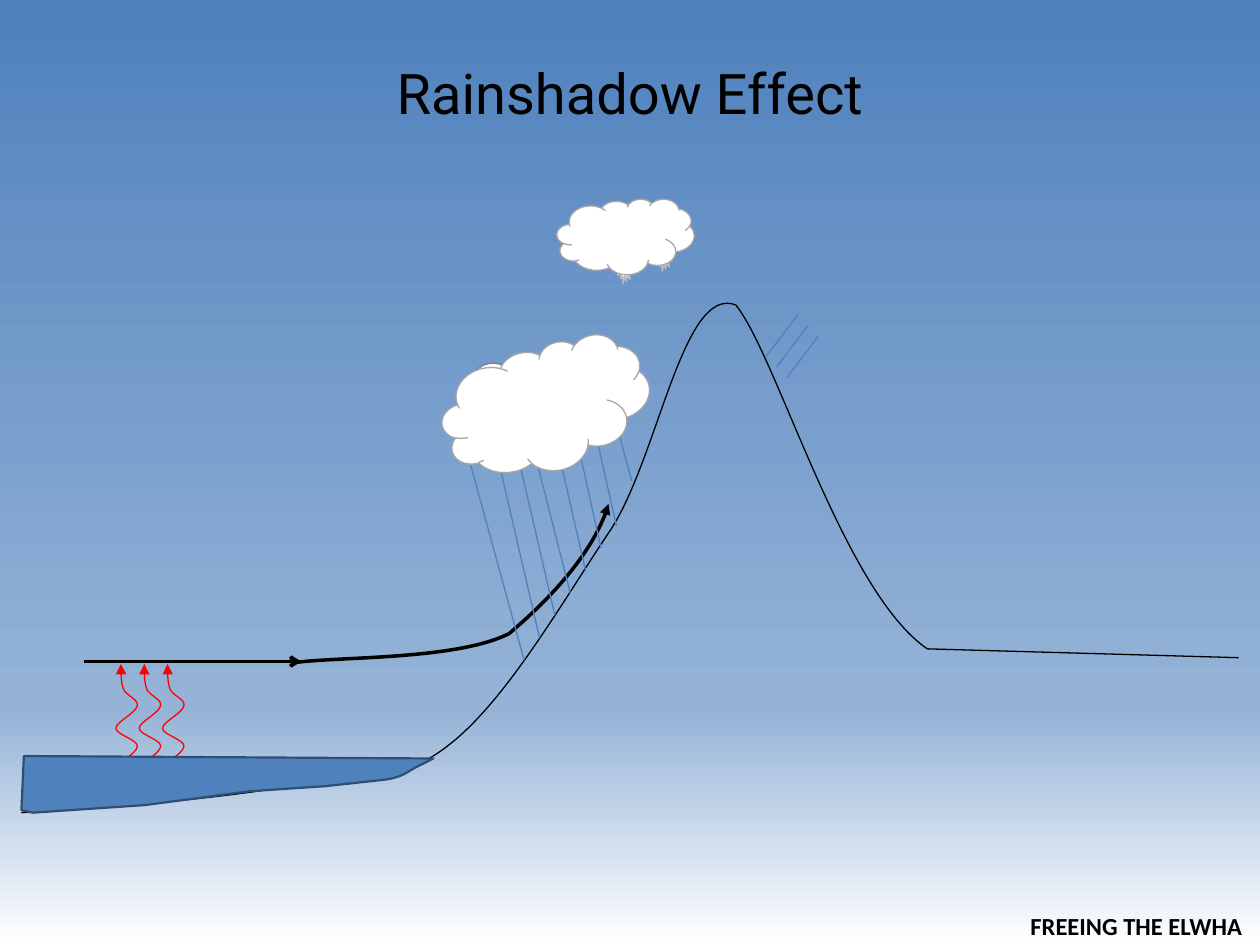
from copy import deepcopy

from lxml.etree import SubElement
from pptx import Presentation
from pptx.dml.color import RGBColor
from pptx.enum.shapes import MSO_CONNECTOR, MSO_SHAPE
from pptx.enum.text import MSO_ANCHOR, PP_ALIGN
from pptx.oxml.ns import qn
from pptx.util import Inches, Pt

BLUE = RGBColor(0x4F, 0x81, 0xBD)
HAZE = RGBColor(0x95, 0xB3, 0xD7)
SHORE = RGBColor(0x2F, 0x4E, 0x72)
WHITE = RGBColor(0xFF, 0xFF, 0xFF)
BLACK = RGBColor(0, 0, 0)
RED = RGBColor(0xFF, 0, 0)
GREY = RGBColor(0x80, 0x80, 0x80)
CLOUD_EDGE = RGBColor(0xA6, 0xA6, 0xA6)
SNOW_EDGE = RGBColor(0xBF, 0xBF, 0xBF)

W, H = Inches(10), Inches(7.5)
COL, ROW = W / 100, H / 75  # the slide is a grid of 100 columns by 75 rows


def grid(box, x=0, y=0):
    """Slide position of a point given from the corner of a box."""
    return round((box[0] + x) * COL), round((box[1] + y) * ROW)


def set_line(sp, color, width, head=None):
    sp.line.color.rgb = color
    sp.line.width = Pt(width)
    if head:
        SubElement(sp.line._get_or_add_ln(), qn("a:tailEnd"), type=head)


def add_line(shapes, box, start, end, color, width, head=None):
    sp = shapes.add_connector(MSO_CONNECTOR.STRAIGHT, *grid(box, *start), *grid(box, *end))
    set_line(sp, color, width, head)
    SubElement(sp._element.spPr, qn("a:effectLst"))


def add_shape(shapes, kind, box, edge, rotation=0):
    size = round(box[2] * COL), round(box[3] * ROW)
    sp = shapes.add_shape(kind, *grid(box), *size)
    sp.shadow.inherit = False
    sp.fill.solid()
    sp.fill.fore_color.rgb = WHITE
    sp.rotation = rotation
    set_line(sp, edge, 0.75)


def bend(sp, segments):
    """Turn each run of three outline points into one Bézier curve."""
    runs = iter(list(sp._element.iter(qn("a:lnTo"))))
    for seg in segments:
        first, *others = [next(runs) for _ in seg]
        if others:
            first.tag = qn("a:cubicBezTo")
            for run in others:
                first.append(run[0])
                run.getparent().remove(run)


def add_outline(shapes, box, start, segments, color, width, head=None, fill=None):
    """Draw segments of one point (straight) or three points (Bézier curve)."""
    builder = shapes.build_freeform(*grid(box, *start), scale=1.0)
    builder.add_line_segments([grid(box, *p) for seg in segments for p in seg],
                              close=fill is not None)
    sp = builder.convert_to_shape()
    bend(sp, segments)
    sp.shadow.inherit = False
    if fill is None:
        sp.fill.background()
    else:
        sp.fill.solid()
        sp.fill.fore_color.rgb = fill
    set_line(sp, color, width, head)


def add_sky(s):
    fill = s.background.fill
    fill.gradient()
    fill.gradient_angle = 270
    stops = next(s.element.iter(qn("a:gsLst")))
    stops.append(deepcopy(stops[-1]))
    for stop, (position, color) in zip(fill.gradient_stops,
                                       ((0, BLUE), (0.75, HAZE), (1, WHITE))):
        stop.position = position
        stop.color.rgb = color


def add_words(sp, box, text, font, align):
    sp.left, sp.top = grid(box)
    sp.width, sp.height = round(box[2] * COL), round(box[3] * ROW)
    tf = sp.text_frame
    tf.word_wrap = True
    p = tf.paragraphs[0]
    p.alignment = align
    r = p.add_run()
    r.text = text
    for name, value in font.items():
        setattr(r.font, name, value)
    r.font.color.rgb = BLACK
    return tf


def add_lee_drizzle(s, box):
    group = s.shapes.add_group_shape().shapes
    for i in range(3):
        step = 0.83 * i
        add_line(group, box, (step, 3.3 + step), (2.5 + step, step), BLUE, 0.75)


def add_snow(s, box):
    group = s.shapes.add_group_shape().shapes
    for x, y in ((2.5, 0), (1.9, 2), (3.8, 2), (0.7, 3), (0, 1)):
        add_shape(group, MSO_SHAPE.EXPLOSION1, (box[0] + x, box[1] + y, 1.2, 2), SNOW_EDGE)


def add_evaporation(s, box):
    group = s.shapes.add_group_shape().shapes
    wave = [((1, 7.6), (1.7, 7.1), (1.7, 6.7)),
            ((1.7, 6.2), (0, 5.8), (0, 5.3)),
            ((0, 4.8), (1.6, 4.1), (1.7, 3.5)),
            ((1.8, 3), (0.8, 2.7), (0.6, 2.2)),
            ((0.4, 1.6), (0.4, 0.7), (0.4, 0.3)),
            ((0.4, 0), (0.4, 0.1), (0.4, 0.2))]
    for i in range(3):
        add_outline(group, (box[0] + 1.85 * i, box[1]), (0.2, 8.1), wave, RED, 0.75, "triangle")


def add_mountain(s, box):
    slope = [((6.4, 41.5), (13.1, 41), (18.7, 40.2)),
             ((24.3, 39.3), (29.1, 40.2), (33.7, 36.7)),
             ((38.4, 33.2), (42.9, 25.2), (46.8, 19.4)),
             ((50.6, 13.5), (52.5, 0), (56.7, 1.6)),
             ((60, 5.7), (65.2, 24.3), (71.9, 28.9)),
             ((96.6, 29.6),)]
    add_outline(s.shapes, box, (0, 41.9), slope, BLACK, 0.75)


def add_sea(s, box):
    bed = [((32.7, 0.2),), ((31.5, 0.8),),
           ((30.8, 1.1), (30.4, 1.7), (28.7, 1.9)),
           ((24.1, 2.4),), ((18.1, 2.8),), ((9.8, 3.9),), ((0.9, 4.5),), ((0, 4.3),)]
    add_outline(s.shapes, box, (0.2, 0), bed, SHORE, 1.25, fill=BLUE)


def add_wind(s, box):
    add_line(s.shapes, box, (0, 12.5), (17.2, 12.5), BLACK, 2, "arrow")
    rise = [((20.2, 12.1), (29.5, 12.4), (33.7, 10.3)),
            ((36.3, 8.1), (40.4, 4.1), (41.6, 0))]
    add_outline(s.shapes, box, (16.6, 12.6), rise, BLACK, 2, "triangle")


def add_rain(s, box):
    group = s.shapes.add_group_shape().shapes
    tops = ((0, 5.3), (2.5, 5.8), (3.6, 3.5), (4.9, 3.5),
            (7.3, 5.3), (8.6, 3.5), (9.8, 1.8), (11, 0))
    # The feet climb the slope evenly; the last drop lands one step higher
    for i, (top, climb) in enumerate(zip(tops, (0, 1, 2, 3, 4, 5, 6, 8))):
        add_line(group, box, top, (4.9 + 1.22 * i, 23.2 - 1.78 * climb), BLUE, 0.75)


def add_clouds(s):
    add_shape(s.shapes, MSO_SHAPE.CLOUD_CALLOUT, (36.7, 28.3, 10, 5.8), GREY)
    add_shape(s.shapes, MSO_SHAPE.CLOUD, (35, 27.4, 16.7, 10), CLOUD_EDGE, 348.6)
    add_shape(s.shapes, MSO_SHAPE.CLOUD, (44.2, 15.8, 10.9, 6), CLOUD_EDGE)


def main():
    prs = Presentation()
    prs.slide_width, prs.slide_height = W, H
    s = prs.slides.add_slide(prs.slide_layouts[5])
    add_sky(s)

    # Title
    tf = add_words(s.shapes.title, (5, 3, 90, 8.7), "Rainshadow Effect",
                   {"name": "Roboto", "size": Pt(32)}, PP_ALIGN.CENTER)
    tf.vertical_anchor = MSO_ANCHOR.MIDDLE

    # Diagram, from back to front
    add_lee_drizzle(s, (60.8, 25))
    add_snow(s, (48.3, 17.5))
    add_evaporation(s, (9.2, 52.5))
    add_mountain(s, (1.7, 22.6))
    add_sea(s, (1.7, 60))
    add_wind(s, (6.7, 40))
    add_rain(s, (36.7, 29.2))
    add_clouds(s)

    # Footer
    add_words(s.shapes.add_textbox(0, 0, COL, ROW), (80.8, 71.8, 19.2, 3.2), "FREEING THE ELWHA",
              {"name": "Calibri", "size": Pt(14), "bold": True}, PP_ALIGN.LEFT)

    prs.save("out.pptx")


if __name__ == "__main__":
    main()
